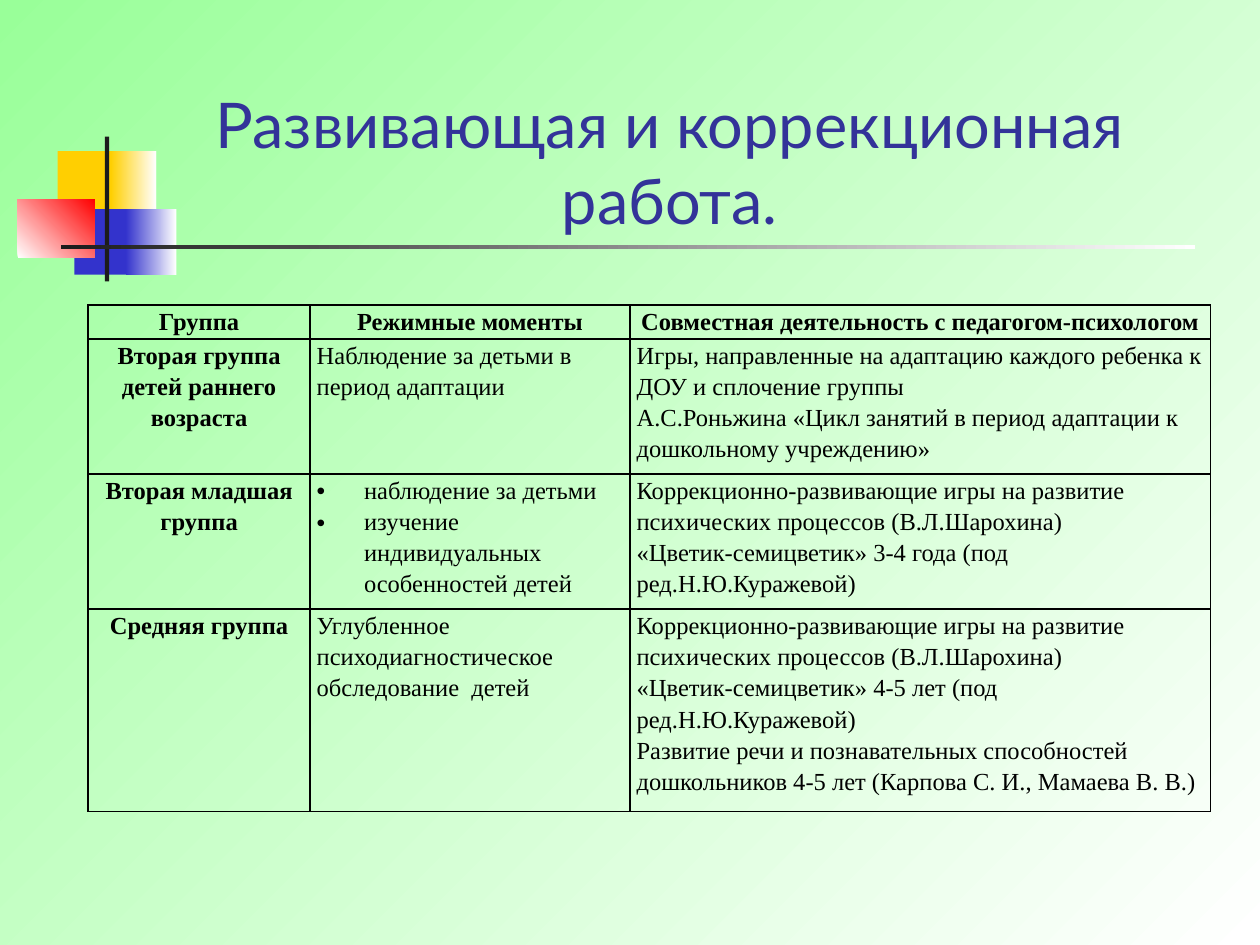
from dataclasses import dataclass

from lxml.etree import SubElement as Sub
from pptx import Presentation
from pptx.dml.color import RGBColor as Rgb
from pptx.enum.shapes import MSO_SHAPE as Kind
from pptx.enum.text import MSO_ANCHOR as Anchor, PP_ALIGN as Align
from pptx.oxml import parse_xml
from pptx.oxml.ns import nsdecls, qn
from pptx.util import Pt


@dataclass(frozen=True)
class Theme:
    """Colours, fonts and type sizes of the slide."""
    mint: str = "99FF99"
    white: str = "FFFFFF"
    gold: str = "FFCF01"
    blue: str = "3333CC"
    red: str = "FF0000"
    dark: str = "1C1C1C"
    navy: str = "333399"
    black: str = "000000"
    head_font: str = "Lato"
    body_font: str = "Times New Roman"
    head_size: int = 36
    body_size: int = 14


THEME = Theme()
TITLE = "Развивающая и коррекционная работа."
COLS = (126.8, 182.8, 331.9)
ROWS = (19.4, 77.2, 77.2, 115.8)
GAMES = "Коррекционно-развивающие игры на развитие психических процессов (В.Л.Шарохина)"
CELLS = (
    ("Группа", "Режимные моменты", "Совместная деятельность с педагогом-психологом"),
    ("Вторая группа детей раннего возраста",
     "Наблюдение за детьми в период адаптации",
     "Игры, направленные на адаптацию каждого ребенка к ДОУ и сплочение группы\n"
     "А.С.Роньжина «Цикл занятий в период адаптации к дошкольному учреждению»"),
    ("Вторая младшая группа",
     "наблюдение за детьми\nизучение индивидуальных особенностей детей",
     f"{GAMES}\n«Цветик-семицветик» 3-4 года (под ред.Н.Ю.Куражевой)"),
    ("Средняя группа",
     "Углубленное психодиагностическое обследование  детей",
     f"{GAMES}\n«Цветик-семицветик» 4-5 лет (под ред.Н.Ю.Куражевой)\n"
     "Развитие речи и познавательных способностей дошкольников 4-5 лет "
     "(Карпова С. И., Мамаева В. В.)"),
)
LIST_CELL = (2, 1)


def blend(fill, start, end, angle):
    """Fill with two colours along a counter-clockwise angle."""
    fill.gradient()
    fill.gradient_angle = angle
    for stop, tone in zip(fill.gradient_stops, (start, end)):
        stop.color.rgb = Rgb.from_string(tone)


def style(para, font, size, tone, bold=False):
    """Format every run of a paragraph."""
    for run in para.runs:
        run.font.name = font
        run.font.size = Pt(size)
        run.font.bold = bold
        run.font.color.rgb = Rgb.from_string(tone)


def add_emblem(slide, left, top):
    """Place the coloured blocks and the two crossing bars."""
    t = THEME
    parts = (
        (23, 8.4, 34.6, 37.4, t.gold, None, 0),
        (53.4, 8.4, 25.9, 37.4, t.gold, t.white, 0),
        (32.5, 41.5, 33, 37.4, t.blue, None, 0),
        (62, 41.5, 28.8, 37.4, t.blue, t.white, 0),
        (0, 35.8, 44.2, 33.4, t.white, t.red, 45),
        (49.9, 0, 2.5, 82.8, t.dark, None, 0),
        (24.8, 62, 648, 2.5, t.dark, t.white, 0),
    )
    for x, y, wide, high, start, end, angle in parts:
        block = slide.shapes.add_shape(
            Kind.RECTANGLE, Pt(left + x), Pt(top + y), Pt(wide), Pt(high))
        block.shadow.inherit = False
        block.line.fill.background()
        if end:
            blend(block.fill, start, end, angle)
        else:
            block.fill.solid()
            block.fill.fore_color.rgb = Rgb.from_string(start)


def add_title(slide, left, top, wide, high):
    """Move and format the title placeholder."""
    title = slide.shapes.title
    title.left, title.top, title.width, title.height = map(Pt, (left, top, wide, high))
    frame = title.text_frame
    frame.text = TITLE
    frame.word_wrap = True
    frame.vertical_anchor = Anchor.BOTTOM
    para = frame.paragraphs[0]
    para.alignment = Align.CENTER
    style(para, THEME.head_font, THEME.head_size, THEME.navy)


def add_edges(cell):
    """Draw a thin line on all four sides of a cell."""
    props = cell._tc.get_or_add_tcPr()
    for spot, side in enumerate("LRTB"):
        props.insert(spot, parse_xml(
            f'<a:ln{side} {nsdecls("a")} w="{Pt(1)}"><a:solidFill>'
            f'<a:srgbClr val="{THEME.black}"/></a:solidFill></a:ln{side}>'))


def add_bullet(para):
    """Give a paragraph a hanging bullet."""
    props = para._p.get_or_add_pPr()
    props.set("marL", str(Pt(27)))
    props.set("indent", str(Pt(-27)))
    Sub(props, qn("a:buFont")).set("typeface", "Arial")
    Sub(props, qn("a:buChar")).set("char", "•")


def fill_cell(cell, text, head, listed):
    """Write and format one table cell."""
    cell.fill.background()
    add_edges(cell)
    cell.margin_left = cell.margin_right = Pt(3.8)
    cell.margin_top = cell.margin_bottom = Pt(0)
    cell.text_frame.text = text
    for para in cell.text_frame.paragraphs:
        para.alignment = Align.CENTER if head else Align.LEFT
        para.line_spacing = 1.15
        style(para, THEME.body_font, THEME.body_size, THEME.black, head)
        if listed:
            add_bullet(para)


def add_grid(slide, left, top):
    """Place the table of groups and activities."""
    grid = slide.shapes.add_table(
        len(ROWS), len(COLS), Pt(left), Pt(top), Pt(sum(COLS)), Pt(sum(ROWS))).table
    grid.first_row = grid.horz_banding = False
    for col, wide in zip(grid.columns, COLS):
        col.width = Pt(wide)
    for r, (row, high) in enumerate(zip(grid.rows, ROWS)):
        row.height = Pt(high)
        for c, cell in enumerate(row.cells):
            fill_cell(cell, CELLS[r][c], r == 0 or c == 0, (r, c) == LIST_CELL)


def main():
    """Build the slide and save it."""
    deck = Presentation()
    deck.slide_width, deck.slide_height = Pt(720), Pt(540)
    slide = deck.slides.add_slide(deck.slide_layouts[5])
    blend(slide.background.fill, THEME.mint, THEME.white, 315)
    add_emblem(slide, 10, 78)
    add_title(slide, 95.8, 44.6, 573.8, 94.3)
    add_grid(slide, 50.4, 174.2)
    deck.save("out.pptx")


if __name__ == "__main__":
    main()
